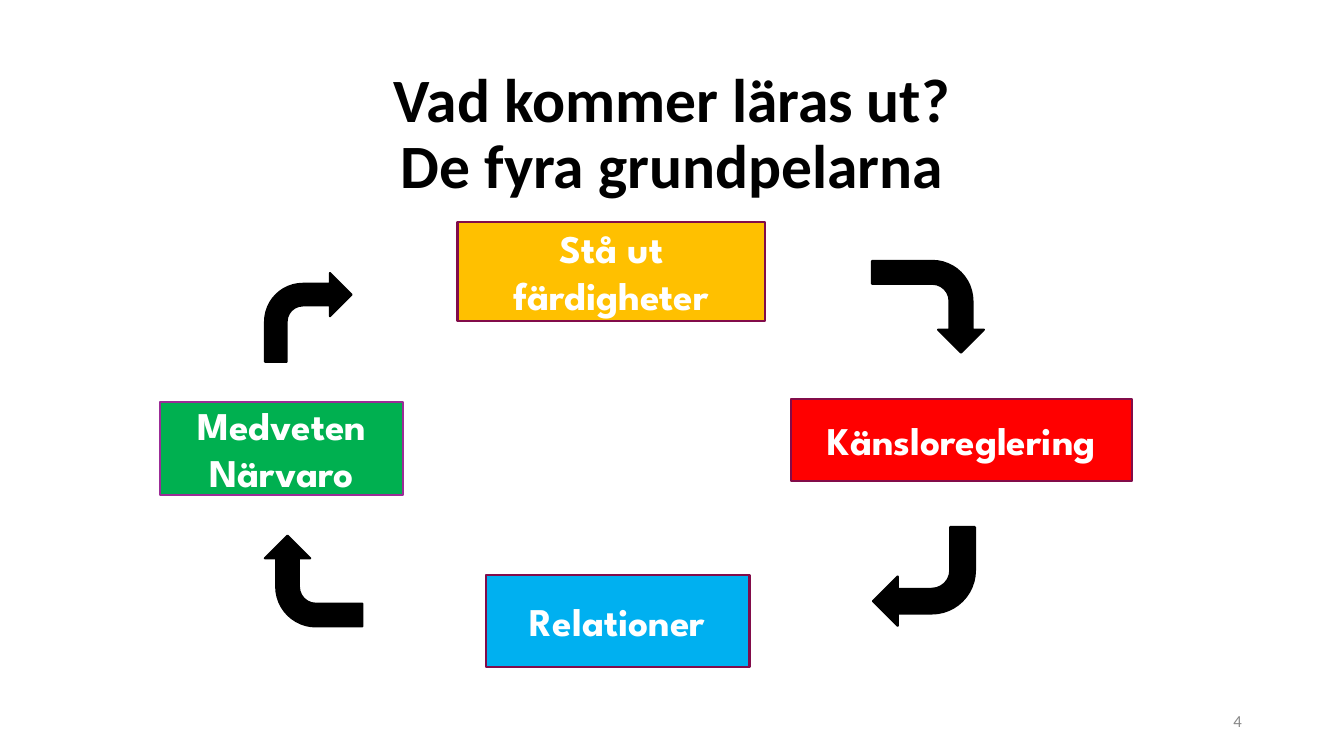
from pptx import Presentation
from pptx.dml.color import RGBColor
from pptx.enum.shapes import MSO_SHAPE
from pptx.enum.text import MSO_ANCHOR, PP_ALIGN
from pptx.util import Cm, Pt

RECTANGLE = MSO_SHAPE.RECTANGLE
BENT_ARROW = MSO_SHAPE.BENT_ARROW
MIDDLE = MSO_ANCHOR.MIDDLE
CENTER = PP_ALIGN.CENTER
RIGHT = PP_ALIGN.RIGHT

BLACK = "000000"
WHITE = "FFFFFF"
GREY = "888888"
PLUM = "820C4A"
PURPLE = "9B2C97"


def write(shape, lines, size, font, color, align, bold=True):
    """Fill a shape with one paragraph, its lines parted by line breaks."""
    frame = shape.text_frame
    frame.word_wrap = True
    frame.vertical_anchor = MIDDLE
    para = frame.paragraphs[0]
    para.alignment = align
    for index, line in enumerate(lines):
        if index:
            para.add_line_break()
        span = para.add_run()
        span.text = line
        span.font.size = Pt(size)
        span.font.name = font
        span.font.bold = bold
        span.font.color.rgb = RGBColor.from_string(color)
    return para


def add_solid(kind, place, fill, outline):
    shape = page.shapes.add_shape(kind, *map(Cm, place))
    shape.shadow.inherit = False
    shape.fill.solid()
    shape.fill.fore_color.rgb = RGBColor.from_string(fill)
    shape.line.color.rgb = RGBColor.from_string(outline)
    shape.line.width = Pt(1.5)
    return shape


deck = Presentation()
deck.slide_width = Cm(33.87)
deck.slide_height = Cm(19.05)
page = deck.slides.add_slide(deck.slide_layouts[6])

# Title
title = page.shapes.add_textbox(Cm(2.34), Cm(1.04), Cm(29.21), Cm(4.75))
title_lines = ["Vad kommer läras ut?", "De fyra grundpelarna"]
write(title, title_lines, 44, "Calibri", BLACK, CENTER).line_spacing = 0.9

# The four pillars: text, (left, top, width, height), fill, outline
pillars = [
    ("Medveten Närvaro", (4.04, 10.13, 6.12, 2.34), "00B050", PURPLE),
    ("Känsloreglering", (19.94, 10.06, 8.59, 2.06), "FF0000", PLUM),
    ("Relationer", (12.24, 14.48, 6.65, 2.34), "00B0F0", PLUM),
    ("Stå ut färdigheter", (11.53, 5.59, 7.75, 2.49), "FFC000", PLUM),
]
for text, place, fill, outline in pillars:
    box = add_solid(RECTANGLE, place, fill, outline)
    write(box, [text], 28, "League Spartan", WHITE, CENTER)

# Arrows run clockwise, each a quarter turn further than the last
arrow_places = [
    (6.68, 6.88, 2.18, 2.24),
    (22.23, 6.32, 2.31, 2.82),
    (22, 13.28, 2.57, 2.49),
    (6.76, 13.41, 2.29, 2.46),
]
for turn, place in enumerate(arrow_places):
    arrow = add_solid(BENT_ARROW, place, BLACK, BLACK)
    arrow.rotation = 90 * turn

# Slide number
number = page.shapes.add_textbox(Cm(23.93), Cm(17.65), Cm(7.62), Cm(1.02))
write(number, ["4"], 12, "Calibri", GREY, RIGHT, bold=False)

deck.save("out.pptx")
